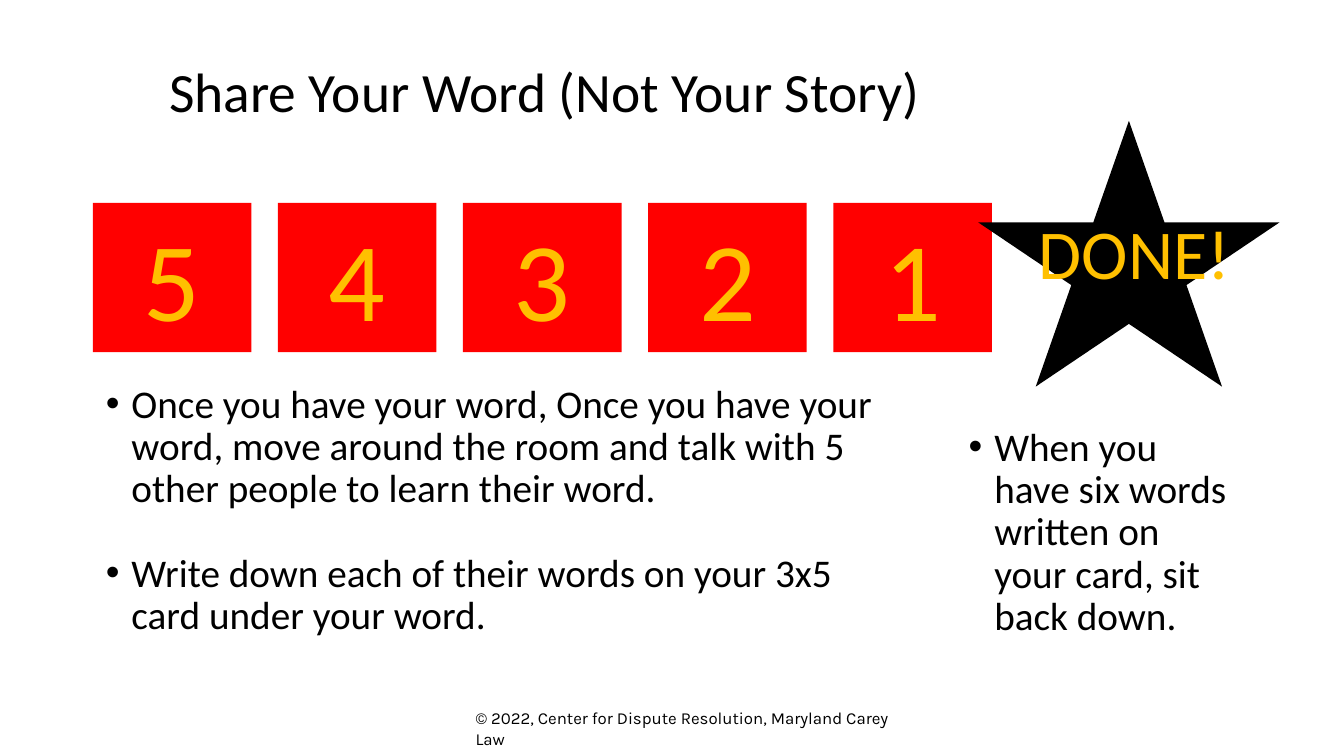
from lxml import etree
from pptx import Presentation
from pptx.dml.color import RGBColor
from pptx.enum.shapes import MSO_SHAPE
from pptx.enum.text import MSO_ANCHOR, PP_ALIGN
from pptx.oxml.ns import qn
from pptx.util import Inches, Pt

RECTANGLE, STAR = MSO_SHAPE.RECTANGLE, MSO_SHAPE.STAR_5_POINT
TOP, MIDDLE = MSO_ANCHOR.TOP, MSO_ANCHOR.MIDDLE
LEFT, CENTER, JUSTIFY = PP_ALIGN.LEFT, PP_ALIGN.CENTER, PP_ALIGN.JUSTIFY

COLORS = {"text": "000000", "card": "FF0000", "star": "000000", "accent": "FFC000"}
BODY_FONT, FOOTER_FONT = "Calibri", "Karla"


def color(name):
    """Return the named colour."""
    return RGBColor.from_string(COLORS[name])


def prepare_frame(shape, anchor=TOP):
    """Set wrapping, insets and anchor, and return the text frame."""
    frame = shape.text_frame
    frame.word_wrap = True
    frame.vertical_anchor = anchor
    frame.margin_left = frame.margin_right = Inches(0.1)
    frame.margin_top = frame.margin_bottom = Inches(0.05)
    return frame


def write(paragraph, text, size, color_name="text", font=BODY_FONT, align=LEFT):
    """Add one formatted run to a paragraph."""
    paragraph.alignment = align
    run = paragraph.add_run()
    run.text = text
    run.font.name = font
    run.font.size = Pt(size)
    run.font.color.rgb = color(color_name)


def add_label(slide, box, text, size, anchor=TOP, spacing=1.0, **style):
    """Add a text box holding a single paragraph."""
    label = slide.shapes.add_textbox(*map(Inches, box))
    paragraph = prepare_frame(label, anchor).paragraphs[0]
    paragraph.line_spacing = spacing
    write(paragraph, text, size, **style)


def add_bullets(slide, box, items):
    """Add a text box with one bulleted paragraph per item."""
    frame = prepare_frame(slide.shapes.add_textbox(*map(Inches, box)))
    for index, item in enumerate(items):
        paragraph = frame.add_paragraph() if index else frame.paragraphs[0]
        paragraph.line_spacing = 0.9
        if index:
            paragraph.space_before = Pt(22.5)
        properties = paragraph._p.get_or_add_pPr()
        properties.set("marL", str(Inches(0.19)))
        properties.set("indent", str(-Inches(0.19)))
        etree.SubElement(properties, qn("a:buFont")).set("typeface", "Arial")
        etree.SubElement(properties, qn("a:buChar")).set("char", "•")
        write(paragraph, item, 21)


def add_filled_shape(slide, kind, box, fill):
    """Add a flat shape without outline."""
    shape = slide.shapes.add_shape(kind, *map(Inches, box))
    shape.shadow.inherit = False
    shape.fill.solid()
    shape.fill.fore_color.rgb = color(fill)
    shape.line.fill.background()
    return shape


def add_countdown(slide, box, numbers):
    """Spread numbered cards evenly across the box."""
    left, top, width, height = box
    card_width = 1.18
    step = (width - card_width) / (len(numbers) - 1)
    for index, number in enumerate(numbers):
        card_box = (left + index * step, top, card_width, height)
        card = add_filled_shape(slide, RECTANGLE, card_box, "card")
        paragraph = prepare_frame(card).paragraphs[0]
        write(paragraph, number, 60, "accent", align=CENTER)


def add_done_star(slide, box):
    """Add the sharp-cornered star with its caption."""
    left, top, width, height = box
    star = add_filled_shape(slide, STAR, box, "star")
    star.line.color.rgb = color("star")
    star.line.width = Pt(1)
    outline = star.line._get_or_add_ln()
    etree.SubElement(outline, qn("a:miter")).set("lim", "800000")
    caption_box = (left + 0.33, top + 0.59, 1.69, 0.73)
    add_label(slide, caption_box, "DONE!", 37.5, color_name="accent", align=JUSTIFY)


def main():
    """Build and save the slide."""
    presentation = Presentation()
    presentation.slide_width = Inches(10)
    presentation.slide_height = Inches(10 * 9 / 16)
    slide = presentation.slides.add_slide(presentation.slide_layouts[6])
    add_label(slide, (1.16, 0.49, 6.94, 0.43), "Share Your Word (Not Your Story)",
              29.7, anchor=MIDDLE, spacing=0.9)
    add_bullets(slide, (0.69, 2.81, 6.16, 2.25), [
        "Once you have your word, Once you have your word, move around the room "
        "and talk with 5 other people to learn their word.",
        "Write down each of their words on your 3x5 card under your word.",
    ])
    add_bullets(slide, (7.11, 3.13, 2.2, 1.94), [
        "When you have six words written on your card, sit back down.",
    ])
    add_countdown(slide, (0.69, 1.51, 6.69, 1.11), "54321")
    add_done_star(slide, (7.3, 0.92, 2.2, 1.94))
    add_label(slide, (3.44, 5.22, 3.35, 0.25),
              "© 2022, Center for Dispute Resolution, Maryland Carey Law",
              9, font=FOOTER_FONT)
    presentation.save("out.pptx")


if __name__ == "__main__":
    main()
